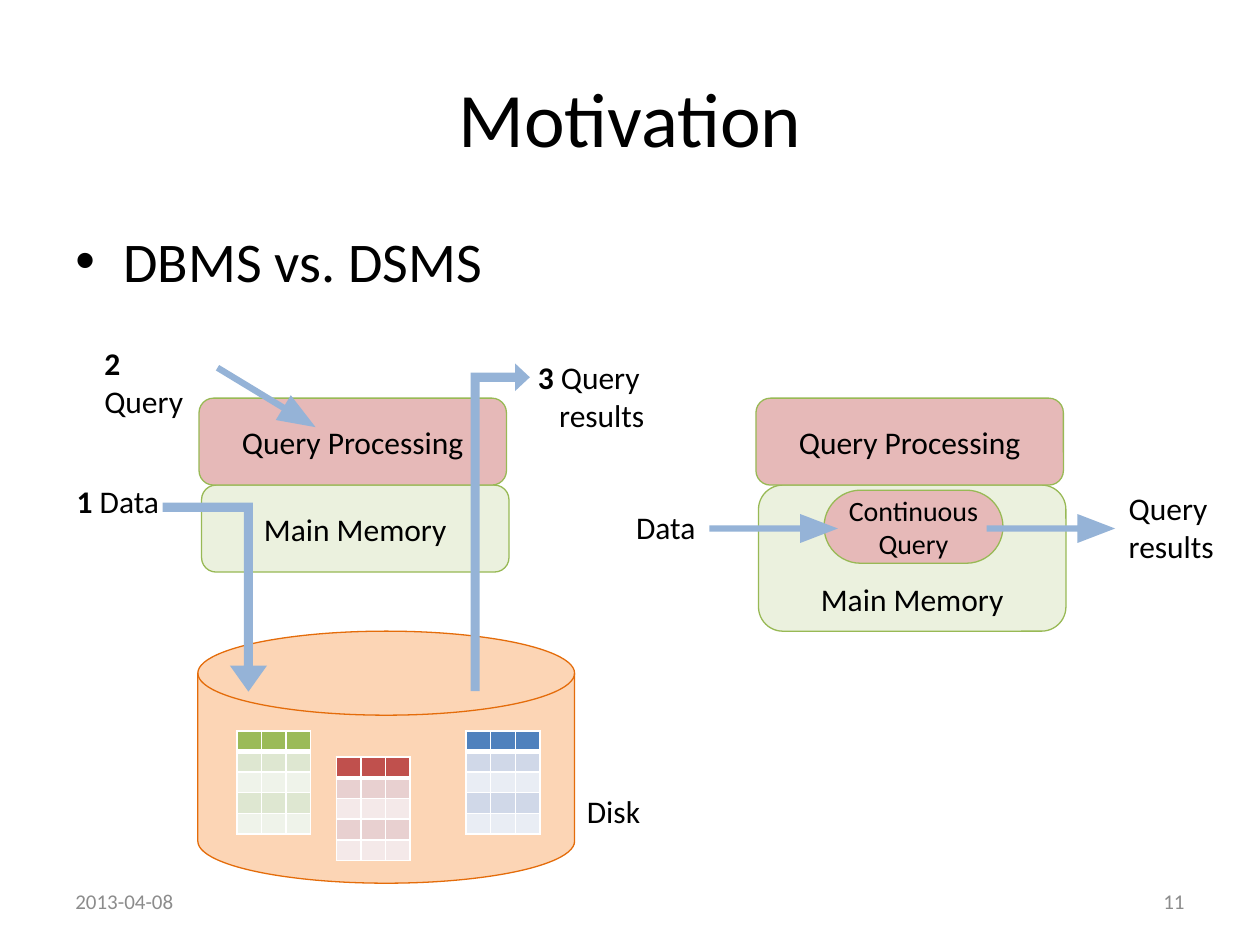
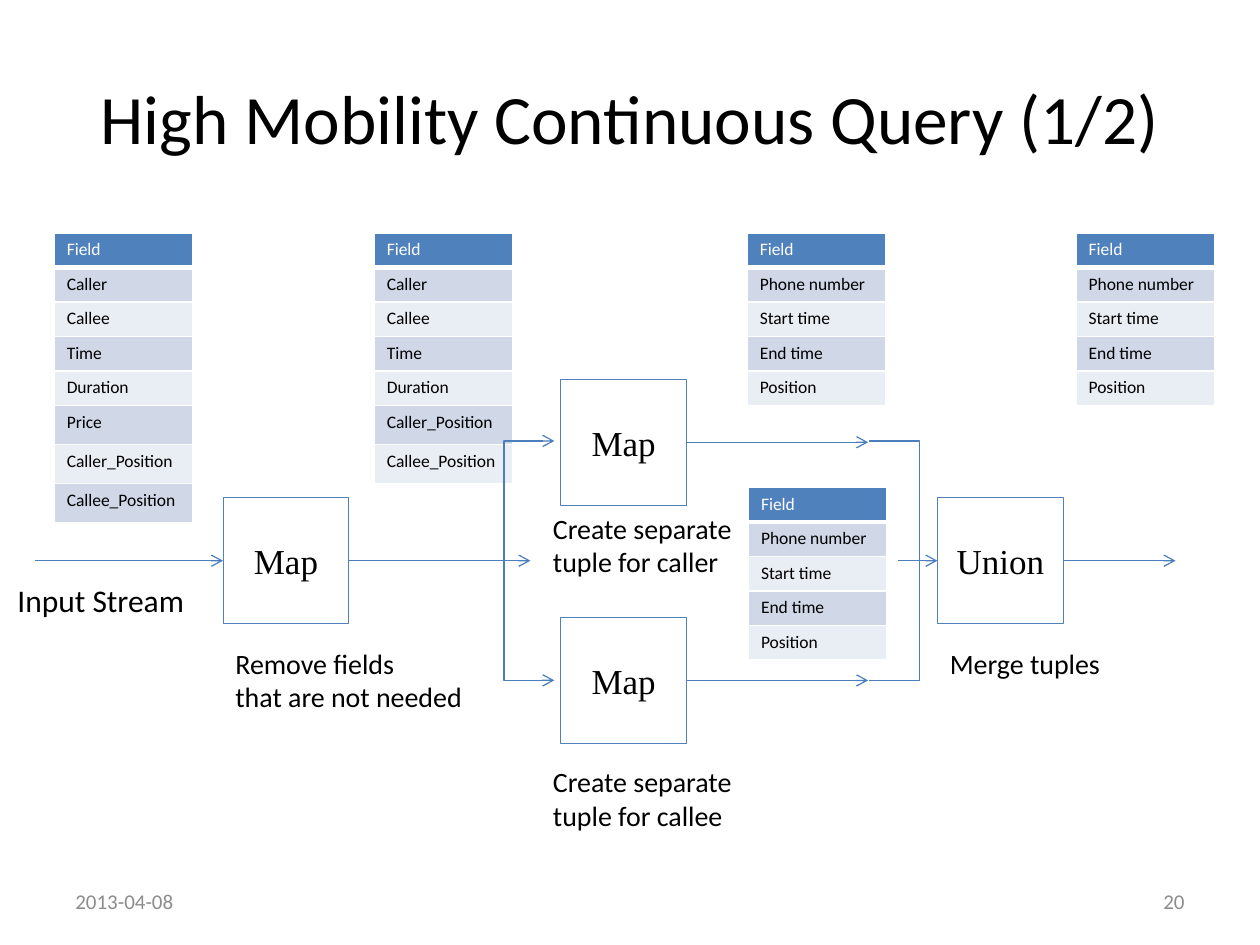
from lxml import etree
from pptx import Presentation
from pptx import util as u
from pptx.dml.color import RGBColor
from pptx.enum import shapes, text
from pptx.oxml.ns import qn

C = {
    "black": "000000", "white": "FFFFFF", "footer": "8C8C8C",
    "pink": "E6B9B8", "pale_green": "EBF1DE", "green_line": "98B955",
    "peach": "FCD5B5", "orange": "E46C0A", "arrow": "95B3D7",
    "blue": "4F81BD", "flow": "4B7EBC",
}
BANDS = {  # header, odd rows, even rows
    "green": ("9BBB59", "DEE7D1", "EFF3EA"),
    "red": ("C0504D", "E8D0D0", "F4E9E9"),
    "blue": ("4F81BD", "D0D8E8", "E9EDF4"),
}
KIND, ALIGN, ANCHOR = shapes.MSO_SHAPE, text.PP_ALIGN, text.MSO_ANCHOR
RGB = RGBColor.from_string

prs = Presentation()
prs.slide_width, prs.slide_height = u.Inches(10), u.Inches(7.5)
CELL = prs.slide_width / 100  # the slide is a grid of 100 columns by 75 rows


def put(s, at, words="", kind=None, fill=None, line=None, weight=0.75, size=18,
        font="Calibri", color="black", lead="", align=None, anchor=None,
        wrap=False, adj=(), rot=0, flip=False):
    """Add a text box, or a preset shape if kind is given; lead is a bold start."""
    box = [round(v * CELL) for v in at]
    if kind is None:
        sp = s.shapes.add_textbox(*box)
    else:
        sp = s.shapes.add_shape(kind, *box)
        sp.shadow.inherit = False
        align, anchor, wrap = align or ALIGN.CENTER, anchor or ANCHOR.MIDDLE, True
        for part, paint in ((sp.fill, fill), (sp.line.fill, line)):
            if paint:
                part.solid()
                part.fore_color.rgb = RGB(C[paint])
            else:
                part.background()
        if line:
            sp.line.width = u.Pt(weight)
        for i, value in enumerate(adj):
            sp.adjustments[i] = value
        sp.rotation = rot
        if flip:
            sp._element.spPr.find(qn("a:xfrm")).set("flipV", "1")
    tf = sp.text_frame
    tf.word_wrap = wrap
    if anchor is not None:
        tf.vertical_anchor = anchor
    for i, row in enumerate(words.split("\n") if words else []):
        p = tf.paragraphs[0] if i == 0 else tf.add_paragraph()
        p.alignment = align
        for part, bold in ((lead if i == 0 else "", True), (row, False)):
            if part:
                r = p.add_run()
                r.text = part
                fmt = {"size": u.Pt(size), "name": font, "bold": bold}
                for key, value in fmt.items():
                    setattr(r.font, key, value)
                r.font.color.rgb = RGB(C[color])
    return sp


def put_table(s, x, y, width, heights, rows, bands, size=10, margins=(1, 0.5)):
    """Add a table with a header row, banded rows and white rules."""
    n = len(rows[0])
    frame = s.shapes.add_table(len(rows), n, *[
        round(v * CELL) for v in (x, y, width, sum(heights))])
    tbl = frame.table
    tbl.first_row = tbl.horz_banding = False
    for col in tbl.columns:
        col.width = round(width * CELL / n)
    for i, (row, height) in enumerate(zip(rows, heights)):
        tbl.rows[i].height = round(height * CELL)
        for j, words in enumerate(row):
            cell = tbl.cell(i, j)
            cell.margin_left = cell.margin_right = round(margins[0] * CELL)
            cell.margin_top = cell.margin_bottom = round(margins[1] * CELL)
            for side in "LRTB":
                weight = 3 if i == 0 and side == "B" else 1
                ln = etree.SubElement(cell._tc.get_or_add_tcPr(), qn(f"a:ln{side}"),
                                      w=str(u.Pt(weight)))
                solid = etree.SubElement(ln, qn("a:solidFill"))
                etree.SubElement(solid, qn("a:srgbClr"), val=C["white"])
            cell.fill.solid()
            cell.fill.fore_color.rgb = RGB(bands[0 if i == 0 else 2 - i % 2])
            p = cell.text_frame.paragraphs[0]
            if words:
                r = p.add_run()
                r.text = words
                fmt = {"size": u.Pt(size), "name": "Calibri", "bold": False}
                for key, value in fmt.items():
                    setattr(r.font, key, value)
                r.font.color.rgb = RGB(C["black" if i else "white"])
            etree.SubElement(p._p, qn("a:endParaRPr"), sz=str(size * 100))


# Title and footer of both slides
slides = []
for title, size, number in (("Motivation", 44, "11"),
                            ("High Mobility Continuous Query (1/2)", 39.6, "20")):
    s = prs.slides.add_slide(prs.slide_layouts[5])
    sp = s.shapes.title
    place = {"left": 5, "top": 3, "width": 90, "height": 12.5}
    for key, value in place.items():
        setattr(sp, key, round(value * CELL))
    tf = sp.text_frame
    tf.text, tf.vertical_anchor = title, ANCHOR.MIDDLE
    p = tf.paragraphs[0]
    p.alignment = ALIGN.CENTER
    for key, value in {"size": u.Pt(size), "name": "Calibri"}.items():
        setattr(p.runs[0].font, key, value)
    p.runs[0].font.color.rgb = RGB(C["black"])
    for x, words, align in ((5, "2013-04-08", ALIGN.LEFT), (71.7, number, ALIGN.RIGHT)):
        put(s, (x, 69.5, 23.3, 4), words, size=12, color="footer", align=align,
            anchor=ANCHOR.MIDDLE, wrap=True)
    slides.append(s)
motivation, query = slides

# Motivation: bullet
s = motivation
sp = put(s, (5, 17.5, 90, 8), "DBMS vs. DSMS", size=32, wrap=True)
pPr = sp.text_frame.paragraphs[0]._p.get_or_add_pPr()
pPr.set("marL", str(u.Inches(0.38)))
pPr.set("indent", str(-u.Inches(0.38)))
etree.SubElement(pPr, qn("a:buFont"), typeface="Arial")
etree.SubElement(pPr, qn("a:buChar"), char="•")

# Motivation: DBMS with tables on disk
layer = {"kind": KIND.ROUNDED_RECTANGLE, "line": "green_line"}
memory = {**layer, "fill": "pale_green"}
processing = {**layer, "fill": "pink"}
bent = {"kind": KIND.BENT_UP_ARROW, "fill": "arrow", "flip": True}
straight = {"kind": KIND.RIGHT_ARROW, "fill": "arrow", "adj": (0.22, 1.3)}

put(s, (16, 38.5, 24.4, 6.9), "Main Memory", **memory)
put(s, (15.7, 50.1, 29.9, 20), kind=KIND.FLOWCHART_MAGNETIC_DISK,
    fill="peach", line="orange")
for x, y, name in ((18.8, 58, "green"), (26.7, 60.1, "red"), (37, 58, "blue")):
    put_table(s, x, y, 5.85, [1.64] * 5, [[""] * 3] * 5, BANDS[name], 4, (0, 0))
put(s, (45.6, 62.4, 6.7, 4), "Disk")
put(s, (12.9, 39.9, 8.3, 15), adj=(0.087, 0.178, 0.25), **bent)
put(s, (5.1, 37.8, 8.6, 4), " Data", lead="1")
put(s, (15.8, 31.6, 24.4, 6.9), "Query Processing", **processing)
put(s, (26.7, 39.5, 26, 4.7), adj=(0.153, 0.233, 0.25), rot=270, **bent)
sp = put(s, (41.7, 27.9, 10.7, 7.1), " Query\nresults", lead="3")
sp.text_frame.paragraphs[1]._p.get_or_add_pPr().set("marL", str(u.Inches(0.17)))
put(s, (16.6, 30.4, 9.1, 2.3), rot=31.2, **straight)
put(s, (7.3, 26.8, 9, 7.1), " Query", lead="2", wrap=True)

# Motivation: DSMS with a continuous query in memory
put(s, (60.2, 38.5, 24.4, 11.6), "Main Memory", anchor=ANCHOR.BOTTOM, **memory)
put(s, (60, 31.6, 24.4, 6.9), "Query Processing", **processing)
put(s, (65.4, 38.9, 14.2, 5.8), "Continuous\nQuery", size=16, adj=(0.5,), **processing)
for x in (56.3, 78.3):
    put(s, (x, 40.8, 10.2, 2.3), **straight)
put(s, (49.5, 39.8, 6.8, 4), "Data")
put(s, (88.6, 38.3, 8.9, 7.1), "Query\nresults")

# Continuous query: fields of each stream
s = query
call = ["Caller", "Callee", "Time", "Duration"]
positions = ["Caller_Position", "Callee_Position"]
phone = ["Phone number", "Start time", "End time", "Position"]
for x, y, fields in ((4.3, 18.5, call + ["Price"] + positions),
                     (29.7, 18.5, call + positions),
                     (59.4, 38.7, phone), (59.3, 18.5, phone), (85.4, 18.5, phone)):
    heights = [2.74] * 5 + [3.1] * (len(fields) - 4)
    put_table(s, x, y, 11, heights, [[f] for f in ["Field"] + fields], BANDS["blue"])

# Continuous query: operators and their captions
SIDE, TOP, MIDDLE, BOTTOM = 10, 35.1, 44.5, 54
for x, y, name in ((17.7, MIDDLE, "Map"), (44.5, TOP, "Map"),
                   (44.5, BOTTOM, "Map"), (74.4, MIDDLE, "Union")):
    put(s, (x, y - SIDE / 2, SIDE, SIDE), name, kind=KIND.RECTANGLE, line="blue",
        weight=0.5, size=20, font="Times New Roman")
for x, y, w, h, size, words in (
        (0.4, 45.6, 15.4, 4, 18, "Input Stream"),
        (17.7, 50.8, 20.2, 6.4, 16, "Remove fields\nthat are not needed"),
        (42.9, 40.1, 16.9, 6.4, 16, "Create separate\ntuple for caller"),
        (42.9, 60.2, 16.9, 6.4, 16, "Create separate\ntuple for callee"),
        (74.4, 50.8, 14.1, 3.7, 16, "Merge tuples")):
    put(s, (x, y, w, h), words, size=size)

# Continuous query: streams, with a fork and a join as open outlines
streams = []
for x1, x2, y in ((2.8, 17.7, MIDDLE), (27.7, 42.1, MIDDLE), (54.5, 68.9, TOP),
                  (54.5, 68.9, BOTTOM), (71.3, 74.4, MIDDLE), (84.4, 93.3, MIDDLE)):
    ends = [round(v * CELL) for v in (x1, y, x2, y)]
    sp = s.shapes.add_connector(shapes.MSO_CONNECTOR.STRAIGHT, *ends)
    etree.SubElement(sp._element.spPr, qn("a:effectLst"))
    streams.append((sp, ["tailEnd"]))
for x, trunk, heads in ((44.5, 40.4, ["headEnd", "tailEnd"]), (68.8, 72.9, [])):
    fb = s.shapes.build_freeform(x, TOP, scale=CELL)
    fb.add_line_segments([(trunk, TOP), (trunk, BOTTOM), (x, BOTTOM)], close=False)
    sp = fb.convert_to_shape()
    sp.fill.background()
    sp.shadow.inherit = False
    streams.append((sp, heads))
for sp, heads in streams:
    sp.line.color.rgb = RGB(C["flow"])
    sp.line.width = u.Pt(0.75)
    for head in heads:
        etree.SubElement(sp.line._get_or_add_ln(), qn(f"a:{head}"), type="arrow")

prs.save("out.pptx")
